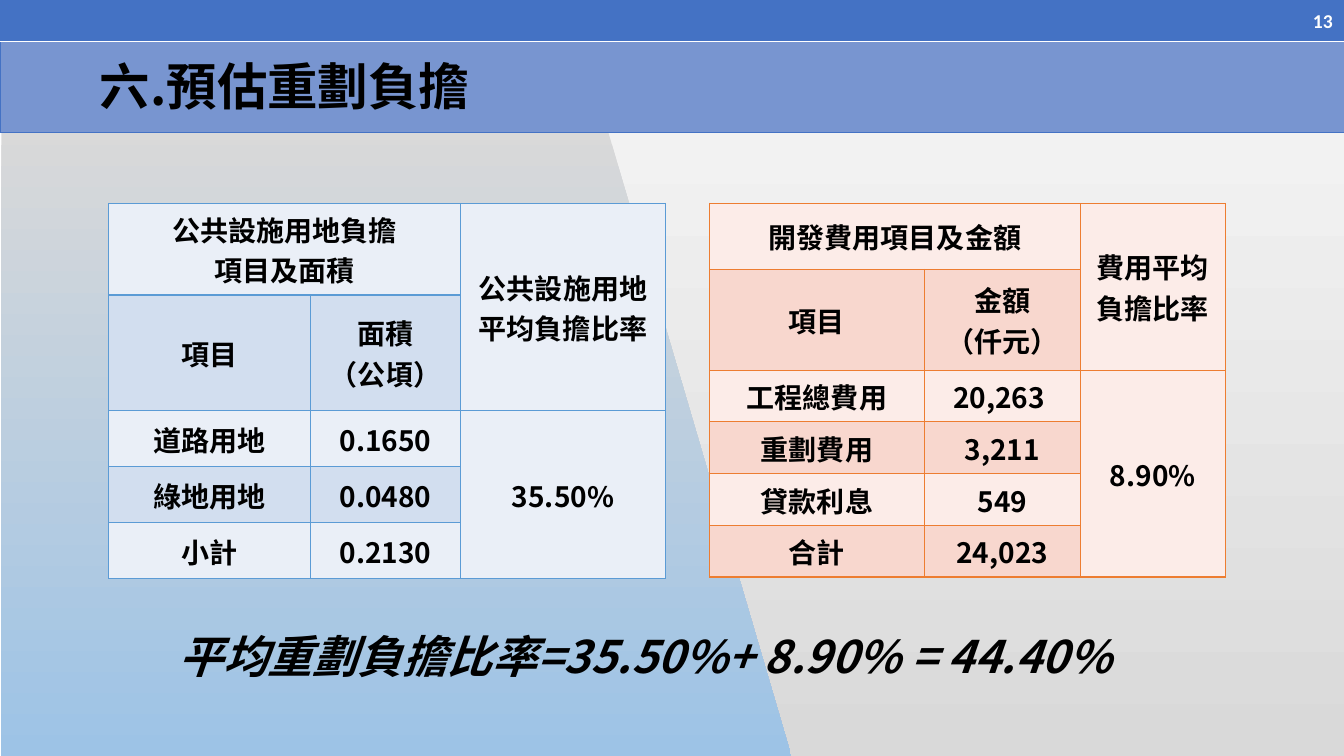
"""Build the slide on estimated land readjustment burdens."""
import lxml.etree
import pptx
import pptx.dml.color
import pptx.enum.shapes
import pptx.enum.text
import pptx.oxml.ns
import pptx.util

RGB = pptx.dml.color.RGBColor
BLACK, WHITE = RGB(0, 0, 0), RGB(255, 255, 255)
BLUE, PALE_BLUE = RGB(0x44, 0x72, 0xC4), RGB(0x78, 0x95, 0xD0)
GREY, LIGHT_GREY, SKY = RGB(0xD9, 0xD9, 0xD9), RGB(0xF2, 0xF2, 0xF2), RGB(0x9D, 0xC3, 0xE6)
LAND_LINE, LAND_FILLS = RGB(0x5B, 0x9B, 0xD5), (RGB(0xEA, 0xEF, 0xF7), RGB(0xD2, 0xDE, 0xEF))
COST_LINE, COST_FILLS = RGB(0xED, 0x7D, 0x31), (RGB(0xFC, 0xEC, 0xE8), RGB(0xF8, 0xD7, 0xCE))
CJK = "Noto Sans CJK SC"
LEFT, CENTER, RIGHT = (pptx.enum.text.PP_ALIGN.LEFT, pptx.enum.text.PP_ALIGN.CENTER,
                       pptx.enum.text.PP_ALIGN.RIGHT)
MIDDLE = pptx.enum.text.MSO_ANCHOR.MIDDLE
qn = pptx.oxml.ns.qn

deck = pptx.Presentation()
deck.slide_width, deck.slide_height = pptx.util.Inches(13.33), pptx.util.Inches(7.5)
COLUMN, ROW = deck.slide_width / 100, deck.slide_height / 100
slide = deck.slides.add_slide(deck.slide_layouts[5])


def area(left, top, width, height):
    """Turn grid columns and rows into slide lengths."""
    return [round(n * unit) for n, unit in zip((left, top, width, height), (COLUMN, ROW) * 2)]


def write(frame, text, align, size, color=BLACK, face=CJK, italic=False):
    """Fill a text frame with one formatted paragraph per line."""
    frame.text = text
    look = {"name": face, "size": pptx.util.Pt(size), "bold": True, "italic": italic}
    for paragraph in frame.paragraphs:
        paragraph.alignment = align
        for run in paragraph.runs:
            for key, value in look.items():
                setattr(run.font, key, value)
            run.font.color.rgb = color
            east_asian = lxml.etree.Element(qn("a:ea"), typeface=face)
            run.font.fill
            run._r.get_or_add_rPr().find(qn("a:latin")).addnext(east_asian)


right_ground = slide.shapes.add_shape(pptx.enum.shapes.MSO_SHAPE.RECTANGLE,
                                      *area(38.18, 17.47, 61.82, 82.53))
outline = slide.shapes.build_freeform(*area(0.1, 16.4, 0, 0)[:2])
outline.add_line_segments([area(x, y, 0, 0)[:2] for x, y in
                           ((45.08, 16.4), (58.88, 100), (0.1, 100))], close=True)
left_ground = outline.convert_to_shape()
for ground, shades in ((right_ground, (LIGHT_GREY, GREY)), (left_ground, (GREY, SKY))):
    ground.shadow.inherit = False
    ground.line.fill.background()
    ground.fill.gradient()
    ground.fill.gradient_angle = 270
    for stop, shade in zip(ground.fill.gradient_stops, shades):
        stop.color.rgb = shade

bordered = []
header = slide.shapes.add_table(2, 1, *area(0, 0, 100, 17.47)).table
header.first_row = header.horz_banding = False
for index, (height, fill, below) in enumerate(((5.47, BLUE, WHITE), (12, PALE_BLUE, BLUE))):
    header.rows[index].height = round(height * ROW)
    strip = header.cell(index, 0)
    strip.fill.solid()
    strip.fill.fore_color.rgb = fill
    bordered.append((strip, (BLUE, BLUE, WHITE if index else BLUE, below), 0.5))

burdens = (
    (8.1, (15, 11.18, 15.23), (11.8, 15.3, 7.41, 7.41, 7.41), LAND_LINE, LAND_FILLS,
     (("公共設施用地負擔\n項目及面積", "", "公共設施用地平均負擔比率"),
      ("項目", "面積\n（公頃）", ""),
      ("道路用地", "0.1650", "35.50%"),
      ("綠地用地", "0.0480", ""),
      ("小計", "0.2130", ""))),
    (52.8, (15.98, 11.6, 10.8), (8.73, 13.3, 6.84, 6.84, 6.84, 6.84), COST_LINE, COST_FILLS,
     (("開發費用項目及金額", "", "費用平均負擔比率"),
      ("項目", "金額\n（仟元）", ""),
      ("工程總費用", "20,263 ", "8.90%"),
      ("重劃費用", "3,211", ""),
      ("貸款利息", "549", ""),
      ("合計", "24,023", ""))),
)
insets = ((0.1, 0.05, 0.05), (0.08, 0, 0), (0.01, 0.01, 0))
for left, widths, heights, line, fills, entries in burdens:
    burden = slide.shapes.add_table(len(heights), len(widths),
                                    *area(left, 26.93, sum(widths), sum(heights))).table
    burden.first_row = burden.horz_banding = False
    for column, width in zip(burden.columns, widths):
        column.width = round(width * COLUMN)
    for index, (height, entry) in enumerate(zip(heights, entries)):
        burden.rows[index].height = round(height * ROW)
        side, top, bottom = map(pptx.util.Inches, insets[min(index, 2)])
        layout = {"margin_left": side, "margin_right": side, "margin_top": top,
                  "margin_bottom": bottom, "vertical_anchor": MIDDLE}
        for position, text in enumerate(entry):
            cell = burden.cell(index, position)
            for key, value in layout.items():
                setattr(cell, key, value)
            write(cell.text_frame, text, CENTER, 20)
            cell.fill.solid()
            cell.fill.fore_color.rgb = fills[index % 2 if position < 2 else 0]
            bordered.append((cell, (line,) * 4, 1))
    burden.cell(0, 0).merge(burden.cell(0, 1))
    burden.cell(0, 2).merge(burden.cell(1, 2))
    burden.cell(2, 2).merge(burden.cell(len(heights) - 1, 2))

for cell, colors, width in bordered:
    properties = cell._tc.get_or_add_tcPr()
    for order, (edge, color) in enumerate(zip(("lnL", "lnR", "lnT", "lnB"), colors)):
        stroke = lxml.etree.Element(qn("a:" + edge), w=str(pptx.util.Pt(width)))
        solid = lxml.etree.SubElement(stroke, qn("a:solidFill"))
        lxml.etree.SubElement(solid, qn("a:srgbClr"), val=str(color))
        properties.insert(order, stroke)

total = slide.shapes.add_textbox(*area(12.53, 82.53, 80.93, 14.8)).text_frame
total.word_wrap = True
write(total, "平均重劃負擔比率=35.50%+ 8.90% = 44.40%", LEFT, 32, italic=True)

page = slide.shapes.add_textbox(*area(95.78, 0.13, 4.12, 5.33)).text_frame
page.word_wrap = True
page.vertical_anchor = MIDDLE
write(page, "13", RIGHT, 14, WHITE, "Calibri")

title = slide.shapes.title
title.left, title.top, title.width, title.height = area(6.68, 6.53, 46.27, 9.47)
title.text_frame.auto_size = pptx.enum.text.MSO_AUTO_SIZE.NONE
title.text_frame.vertical_anchor = MIDDLE
write(title.text_frame, "六.預估重劃負擔", LEFT, 36)
title.element.getparent().append(title.element)

deck.save("out.pptx")
